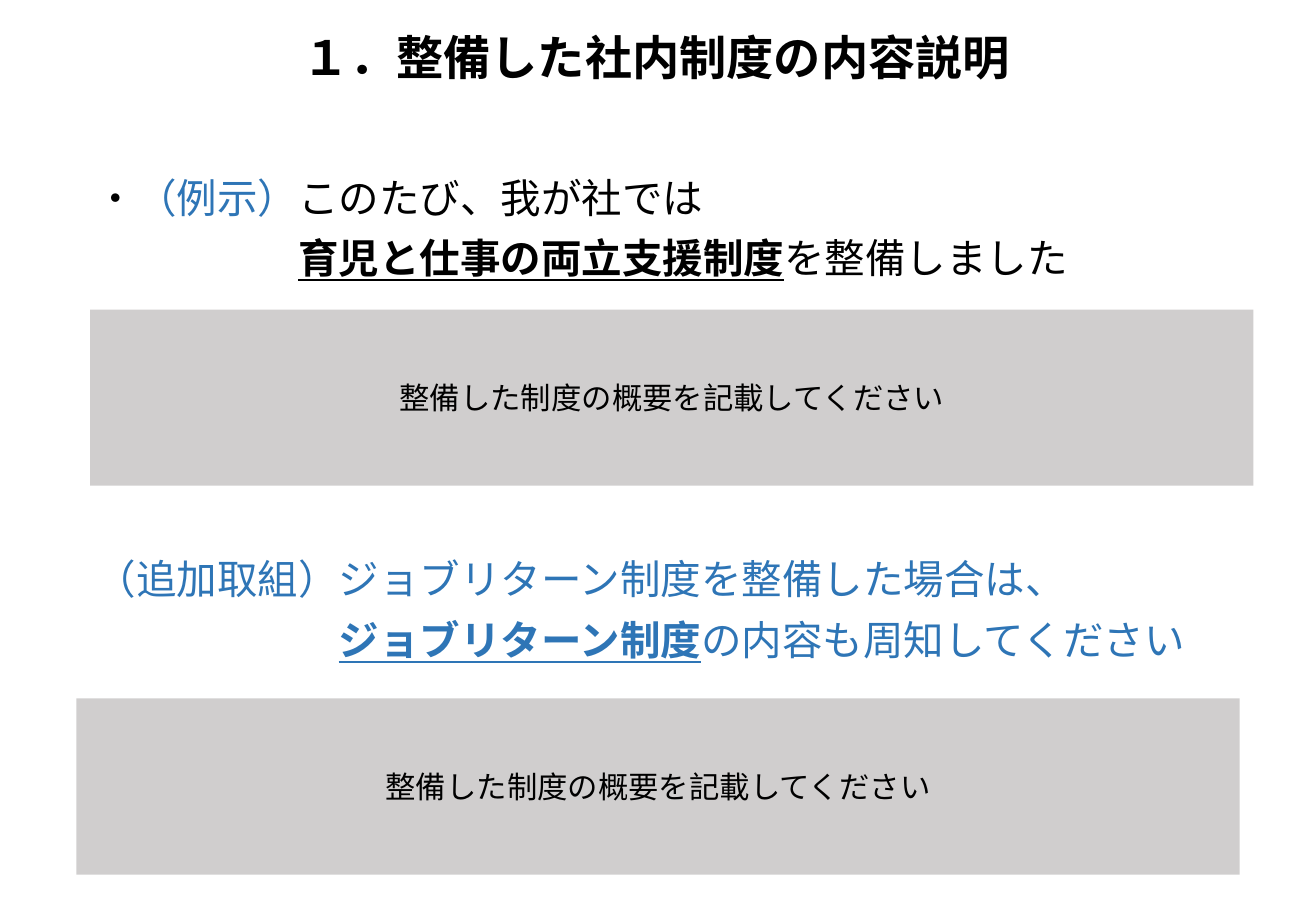
from pptx import Presentation
from pptx.dml.color import RGBColor
from pptx.enum.shapes import MSO_SHAPE
from pptx.enum.text import MSO_ANCHOR, PP_ALIGN
from pptx.util import Pt

RECTANGLE = MSO_SHAPE.RECTANGLE
MIDDLE = MSO_ANCHOR.MIDDLE
CENTER = PP_ALIGN.CENTER
BLACK, BLUE, GRAY = "000000", "2E75B6", "D0CECE"
TEXT_SIZE = 24


def color(value):
    return RGBColor.from_string(value)


def add_span(para, text, text_color, **formats):
    span = para.add_run()
    span.text = text
    span.font.color.rgb = color(text_color)
    for name, value in formats.items():
        setattr(span.font, name, value)


deck = Presentation()
deck.slide_width, deck.slide_height = Pt(780), Pt(540)
page = deck.slides.add_slide(deck.slide_layouts[6])

# Title
title = page.shapes.add_textbox(Pt(172), Pt(16.5), Pt(438.5), Pt(38))
title.text_frame.word_wrap = True
title.text_frame.vertical_anchor = MIDDLE
para = title.text_frame.paragraphs[0]
para.line_spacing = 0.9
add_span(para, "１．整備した社内制度の内容説明", BLACK, name="Arial", size=Pt(28), bold=True)

# Two-line statements: top, width, second-line indent in characters, lines of spans
emphasis = {"bold": True, "underline": True}
statements = [
    (102.2, 596, 5, [
        [("・", BLACK, {}), ("（例示）", BLUE, {}), ("このたび、我が社では", BLACK, {})],
        [("育児と仕事の両立支援制度", BLACK, emphasis), ("を整備しました", BLACK, {})],
    ]),
    (328.3, 669, 6, [
        [("（追加取組）ジョブリターン制度を整備した場合は、", BLUE, {})],
        [("ジョブリターン制度", BLUE, emphasis), ("の内容も周知してください", BLUE, {})],
    ]),
]
for top, width, indent, lines in statements:
    box = page.shapes.add_textbox(Pt(49.7), Pt(top), Pt(width), Pt(70))
    frame = box.text_frame
    frame.word_wrap = True
    for number, spans in enumerate(lines):
        para = frame.add_paragraph() if number else frame.paragraphs[0]
        para.line_spacing = 0.9
        para.space_before = Pt(10)
        left_margin = Pt(number * indent * TEXT_SIZE)
        para._p.get_or_add_pPr().set("marL", str(left_margin))
        for text, text_color, formats in spans:
            add_span(para, text, text_color, name="Calibri", size=Pt(TEXT_SIZE), **formats)

# Gray areas to fill in
for left, top in [(53.5, 183.5), (45.3, 414)]:
    area = page.shapes.add_shape(RECTANGLE, Pt(left), Pt(top), Pt(689.5), Pt(104.4))
    area.shadow.inherit = False
    area.fill.solid()
    area.fill.fore_color.rgb = color(GRAY)
    area.line.fill.background()
    area.text_frame.vertical_anchor = MIDDLE
    para = area.text_frame.paragraphs[0]
    para.alignment = CENTER
    add_span(para, "整備した制度の概要を記載してください", BLACK, name="Calibri", size=Pt(18))

deck.save("out.pptx")
